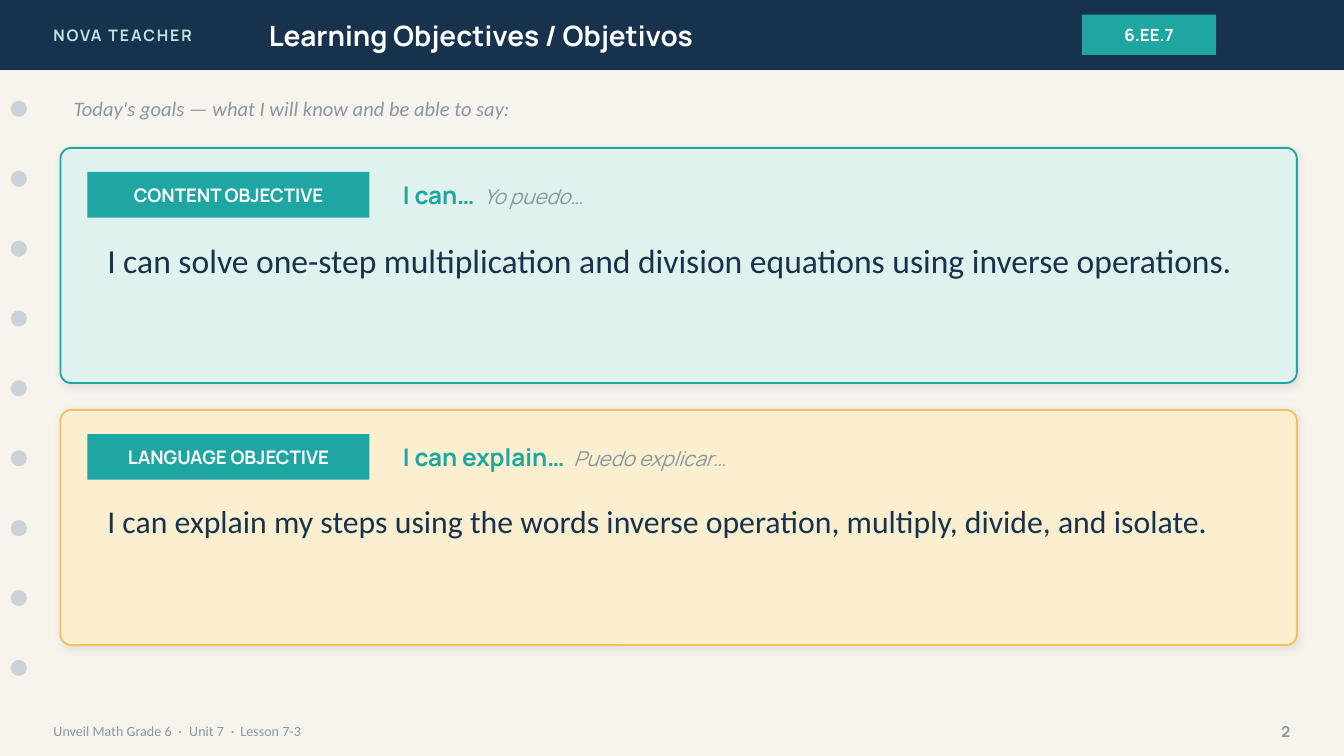
from lxml import etree
from pptx import Presentation
from pptx.dml.color import RGBColor
from pptx.enum.shapes import MSO_SHAPE
from pptx.enum.text import MSO_ANCHOR, MSO_AUTO_SIZE, PP_ALIGN
from pptx.oxml import parse_xml
from pptx.oxml.ns import nsdecls, qn
from pptx.util import Inches, Pt

RECT, ROUND, OVAL = MSO_SHAPE.RECTANGLE, MSO_SHAPE.ROUNDED_RECTANGLE, MSO_SHAPE.OVAL
LEFT, MID, RIGHT = PP_ALIGN.LEFT, PP_ALIGN.CENTER, PP_ALIGN.RIGHT
TOP, CENTER = MSO_ANCHOR.TOP, MSO_ANCHOR.MIDDLE
HEAD, BODY = "Manrope", "Calibri"
HUES = {
    "paper": "F7F4EC", "navy": "17324D", "teal": "1FA6A2", "mint": "DFF2EE",
    "pale": "BFE6E2", "cream": "FBEFD0", "gold": "F2C15B", "gray": "8A96A3",
    "dot": "CBD3D9", "white": "FFFFFF", "shade": "1C2E42",
}


def add_box(kind, spot, fill, edge=None):
    box = slide.shapes.add_shape(kind, *map(Inches, spot))
    box.shadow.inherit = False
    box.fill.solid()
    box.fill.fore_color.rgb = RGBColor.from_string(HUES[fill])
    if edge:
        box.line.color.rgb = RGBColor.from_string(HUES[edge])
        box.line.width = Pt(1)
    else:
        box.line.fill.background()
    return box


def add_text(box, runs, align=LEFT, anchor=CENTER, tabs=()):
    if isinstance(box, tuple):
        box = slide.shapes.add_textbox(*map(Inches, box))
    frame = box.text_frame
    frame.word_wrap = True
    frame.auto_size = MSO_AUTO_SIZE.NONE
    frame.vertical_anchor = anchor
    para = frame.paragraphs[0]
    para.alignment = align
    if tabs:
        stops = etree.SubElement(para._p.get_or_add_pPr(), qn("a:tabLst"))
        for stop in tabs:
            etree.SubElement(stops, qn("a:tab"), pos=str(Inches(stop)), algn="l")
    for words, size, face, hue, bold, slant in runs:
        run = para.add_run()
        run.text = words
        font = para.font if len(runs) == 1 else run.font
        font.size, font.name = Pt(size), face
        font.bold, font.italic = bold, slant
        font.color.rgb = RGBColor.from_string(HUES[hue])
    return para


deck = Presentation()
deck.slide_width = Inches(10)
deck.slide_height = deck.slide_width * 9 // 16
slide = deck.slides.add_slide(deck.slide_layouts[5])
slide.background.fill.solid()
slide.background.fill.fore_color.rgb = RGBColor.from_string(HUES["paper"])

add_box(RECT, (0, 0, 10, 0.52), "navy")
brand = add_text((0.3, 0, 2.4, 0.52), [("NOVA TEACHER", 8.5, HEAD, "pale", True, False)])
brand.runs[0]._r.get_or_add_rPr().set("spc", "100")

title = slide.shapes.title
title.left, title.top, title.width, title.height = map(Inches, (1.9, 0, 5.6, 0.52))
add_text(title, [("Learning Objectives / Objetivos", 15, HEAD, "white", True, False)])
slide.shapes._spTree.append(title._element)

badge = add_box(RECT, (8.05, 0.11, 1, 0.3), "teal")
add_text(badge, [("6.EE.7", 9, HEAD, "white", True, False)], MID)

for row in range(9):
    add_box(OVAL, (0.08, 0.75 + 0.52 * row, 0.12, 0.12), "dot")

add_text((0.3, 5.3, 7, 0.28),
         [("Unveil Math Grade 6\t·\tUnit 7\t·\tLesson 7-3", 7.5, BODY, "gray", False, False)],
         tabs=(0.93, 1.01, 1.32, 1.39))
add_text((9.2, 5.3, 0.5, 0.28), [("2", 8, HEAD, "gray", True, False)], RIGHT)
add_text((0.45, 0.66, 9.2, 0.3),
         [("Today's goals — what I will know and be able to say:", 11, BODY, "gray", False, True)])

goals = [
    ("CONTENT OBJECTIVE", "I can…", "Yo puedo…", 0.6, "mint", "teal", 18,
     "I can solve one-step multiplication and division equations using inverse operations."),
    ("LANGUAGE OBJECTIVE", "I can explain…", "Puedo explicar…", 1.27, "cream", "gold", 17,
     "I can explain my steps using the words inverse operation, multiply, divide, and isolate."),
]
for row, (label, stem, gloss, stop, fill, edge, size, goal) in enumerate(goals):
    top = 1.1 + 1.95 * row
    card = add_box(ROUND, (0.45, top, 9.2, 1.75), fill, edge)
    card.adjustments[0] = 0.046
    glow = card._element.spPr.find(qn("a:effectLst"))
    glow.append(parse_xml(
        f'<a:outerShdw {nsdecls("a")} blurRad="{Pt(4)}" dist="{Pt(1)}" dir="5400000" '
        f'algn="bl" rotWithShape="0"><a:srgbClr val="{HUES["shade"]}">'
        '<a:alpha val="10000"/></a:srgbClr></a:outerShdw>'))
    tag = add_box(RECT, (0.65, top + 0.18, 2.1, 0.34), "teal")
    add_text(tag, [(label, 10, HEAD, "white", True, False)], MID)
    add_text((2.9, top + 0.18, 6.6, 0.34),
             [(stem + "\t", 13, HEAD, "teal", True, False),
              (gloss, 11, HEAD, "gray", False, True)], tabs=(stop,))
    para = add_text((0.7, top + 0.62, 8.7, 1),
                    [(goal, size, BODY, "navy", False, False)], anchor=TOP)
    para.line_spacing = 1.05

deck.save("out.pptx")
